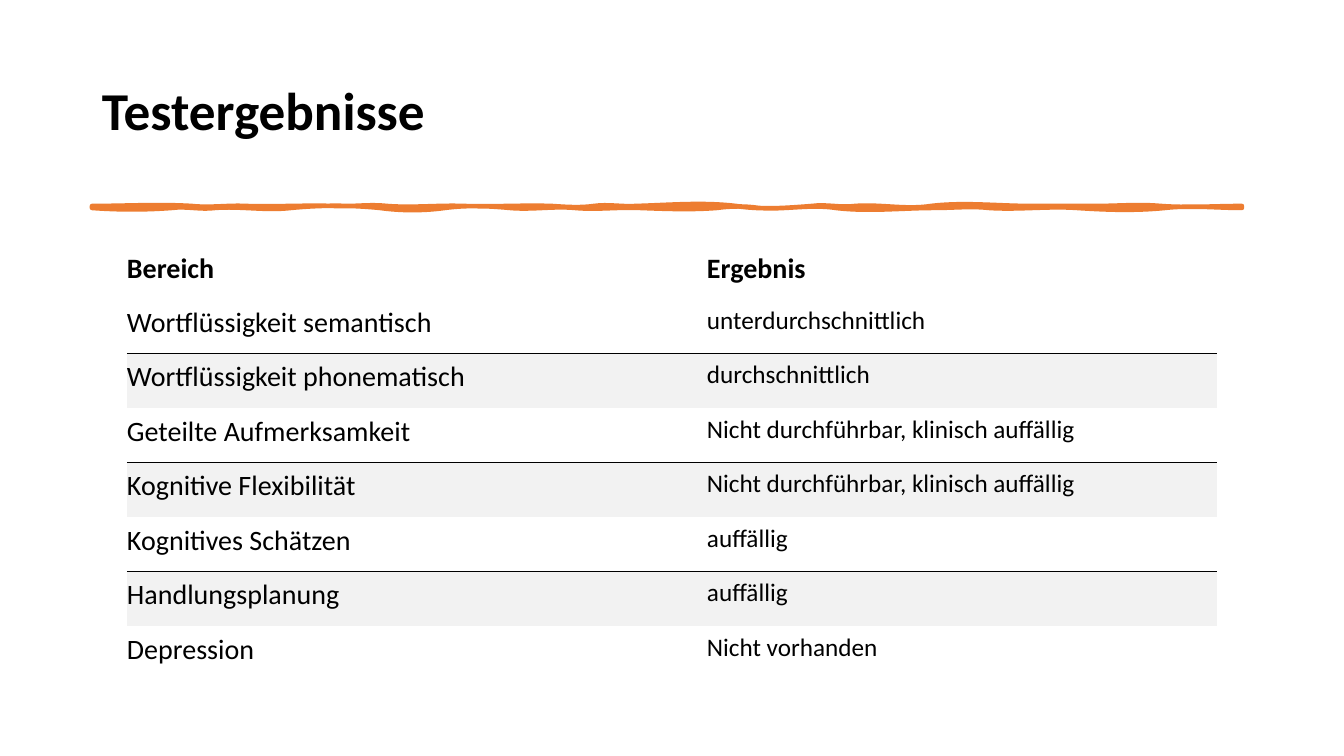
from pptx import Presentation
from pptx import util as u
from pptx.dml.color import RGBColor
from pptx.enum import text
from pptx.oxml.ns import qn
from lxml import etree

# Content
TITLE = "Testergebnisse"
ROWS = [
    ("Bereich", "Ergebnis"),
    ("Wortflüssigkeit semantisch", "unterdurchschnittlich"),
    ("Wortflüssigkeit phonematisch", "durchschnittlich"),
    ("Geteilte Aufmerksamkeit", "Nicht durchführbar, klinisch auffällig"),
    ("Kognitive Flexibilität", "Nicht durchführbar, klinisch auffällig"),
    ("Kognitives Schätzen", "auffällig"),
    ("Handlungsplanung", "auffällig"),
    ("Depression", "Nicht vorhanden"),
]
HEADER_HEIGHT, BODY_HEIGHT = 53, 382

# Brush stroke: each wave is (end x, first bend, second bend) around its edge
START_X, TOP_Y, BOTTOM_Y = 92, 206, 208
TOP_WAVES = [
    (192, 0, -2), (246, 2, -1), (334, 1, -1), (387, 1, -2),
    (464, 2, -1), (552, 1, -1), (594, 1, 2), (636, -2, 1),
    (736, -1, -4), (812, 4, 2), (855, -2, 2), (931, -2, 4),
    (1031, -4, 0), (1096, 0, 0), (1161, 0, -2), (1242, 2, 0),
]
BOTTOM_WAVES = [
    (1165, 0, -3), (1077, 3, 2), (989, -2, 2), (935, -2, 0),
    (836, 0, 4), (759, -4, 2), (717, -2, -2), (640, 2, 1),
    (575, -1, 2), (510, -2, 2), (445, -2, -3), (380, 3, 3),
    (291, -3, -3), (215, 3, -2), (172, 2, -2), (92, 2, 2),
]

BLACK, ORANGE, GREY = "000000", "ED7D31", "F2F2F2"
SCALE = 914400 / 100.8


def px(n):
    return u.Emu(round(n * SCALE))


def color(value):
    return RGBColor.from_string(value)


def assign(obj, values):
    for name, value in values.items():
        setattr(obj, name, value)


def write(tf, words, size, bold, para):
    p = tf.paragraphs[0]
    assign(p, para)
    r = p.add_run()
    r.text = words
    assign(r.font, {"name": "Calibri", "size": u.Pt(size), "bold": bold})
    r.font.color.rgb = color(BLACK)


def bend_line(line, x, y, wave):
    """Turn a straight segment from (x, y) into a curve with two bends."""
    end, *bends = wave
    line.tag = qn("a:cubicBezTo")
    for at, bend in enumerate(bends):
        pt = etree.Element(qn("a:pt"),
                           x=str(px(x + (end - x) * (at + 1) / 3 - START_X)),
                           y=str(px(y + bend - TOP_Y)))
        line.insert(at, pt)


def set_borders(cell, ruled):
    tc_pr = cell._tc.get_or_add_tcPr()
    for at, side in enumerate(("lnL", "lnR", "lnT", "lnB")):
        ln = etree.Element(qn("a:" + side), w=str(u.Pt(0.75)))
        if side in ruled:
            fill = etree.SubElement(ln, qn("a:solidFill"))
            etree.SubElement(fill, qn("a:srgbClr"), val=BLACK)
        else:
            etree.SubElement(ln, qn("a:noFill"))
        tc_pr.insert(at, ln)


prs = Presentation()
assign(prs, {"slide_width": px(1344), "slide_height": px(756)})
slide = prs.slides.add_slide(prs.slide_layouts[6])

# Title
tf = slide.shapes.add_textbox(px(92), px(40), px(1159), px(146)).text_frame
assign(tf, {"word_wrap": True, "vertical_anchor": text.MSO_ANCHOR.MIDDLE})
write(tf, TITLE, 38, True, {"line_spacing": 0.9})

# Brush stroke
end_x = TOP_WAVES[-1][0]
knots = [(wave[0], TOP_Y) for wave in TOP_WAVES] + [(end_x, BOTTOM_Y)]
knots += [(wave[0], BOTTOM_Y) for wave in BOTTOM_WAVES]
builder = slide.shapes.build_freeform(px(START_X), px(TOP_Y), scale=1.0)
builder.add_line_segments([(px(x), px(y)) for x, y in knots], close=True)
sp = builder.convert_to_shape()
lines = list(sp._element.iter(qn("a:lnTo")))
starts = [(START_X, TOP_Y)] + knots
waves = TOP_WAVES + [None] + BOTTOM_WAVES
for line, (x, y), wave in zip(lines, starts, waves):
    if wave:
        bend_line(line, x, y, wave)
sp.shadow.inherit = False
sp.fill.solid()
sp.fill.fore_color.rgb = color(ORANGE)
sp.line.color.rgb = color(ORANGE)
sp.line.width = u.Pt(3.25)
etree.SubElement(sp.line._ln, qn("a:round"))

# Results table
table = slide.shapes.add_table(
    len(ROWS), 2, px(127), px(246), px(1090),
    px(HEADER_HEIGHT + BODY_HEIGHT)).table
assign(table, {"first_row": False, "horz_banding": False})
for column, width in zip(table.columns, (580, 510)):
    column.width = px(width)

for i, row in enumerate(ROWS):
    header = i == 0
    shaded = not header and i % 2 == 0
    last = i == len(ROWS) - 1
    table.rows[i].height = px(
        HEADER_HEIGHT if header else BODY_HEIGHT / (len(ROWS) - 1))
    for j, words in enumerate(row):
        cell = table.cell(i, j)
        assign(cell, {
            "margin_left": 0, "margin_right": px(9),
            "margin_top": px(3 if header else 4), "margin_bottom": px(13),
            "vertical_anchor":
                text.MSO_ANCHOR.BOTTOM if header else text.MSO_ANCHOR.TOP,
        })
        if shaded:
            cell.fill.solid()
            cell.fill.fore_color.rgb = color(GREY)
        else:
            cell.fill.background()
        set_borders(cell, ["lnT"] if shaded else [] if header or last else ["lnB"])
        write(cell.text_frame, words, 20 if header or j == 0 else 18, header,
              {"line_spacing": 1.07, "space_after": u.Pt(8)})

prs.save("out.pptx")
